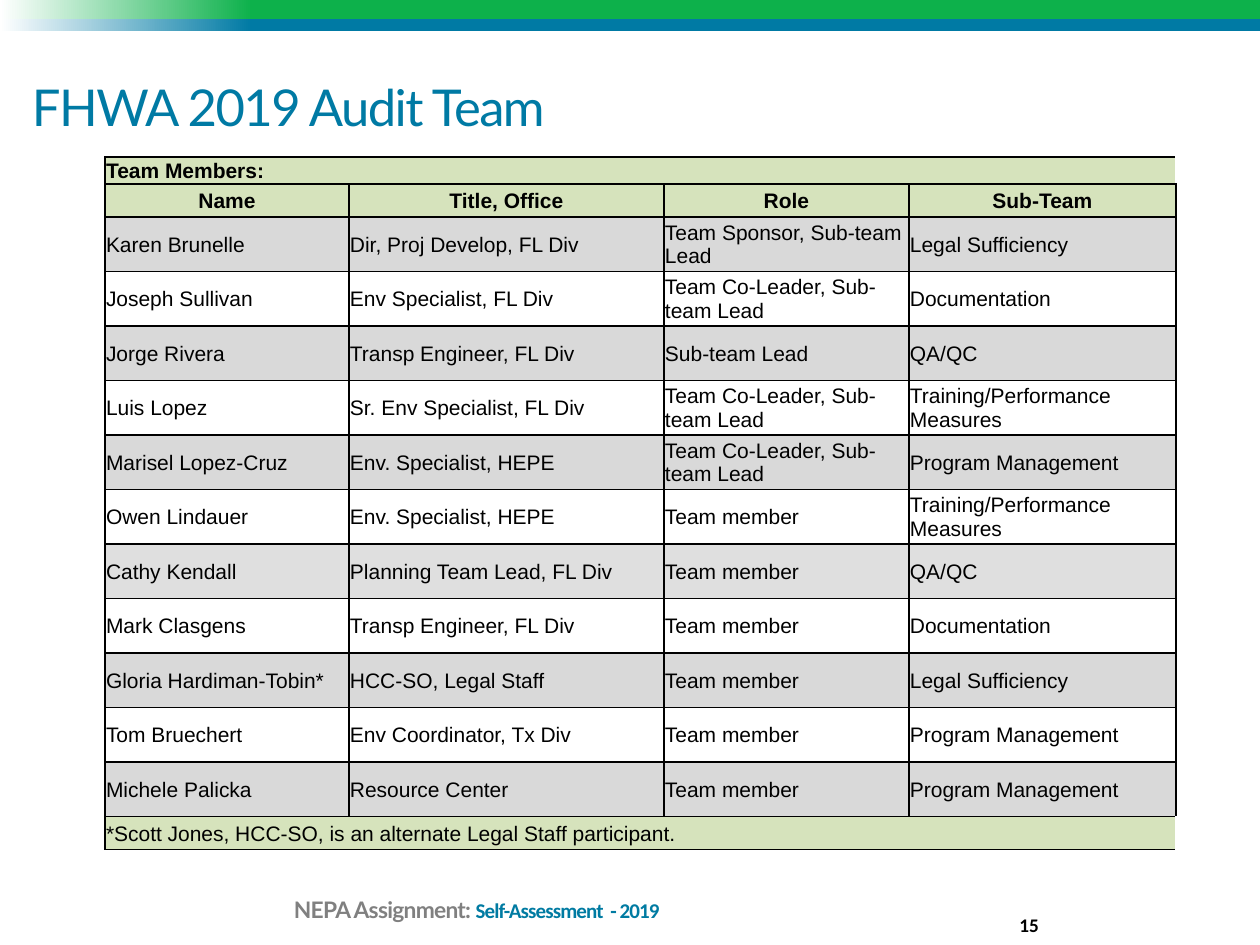
import dataclasses

import pptx
import pptx.dml.color
import pptx.enum.shapes
import pptx.enum.text
import pptx.oxml
import pptx.oxml.ns
import pptx.util

EMU_PER_PX = 914400 / 126
ALIGN = pptx.enum.text.PP_ALIGN
ANCHOR = pptx.enum.text.MSO_ANCHOR


@dataclasses.dataclass(frozen=True)
class Theme:
    heading_font: str = "Lato"
    small_font: str = "Calibri"
    table_font: str = "Arial"
    title_size: int = 29
    label_size: int = 13
    table_size: int = 12
    number_size: int = 11
    white: str = "FFFFFF"
    black: str = "000000"
    green: str = "0DB14B"
    blue: str = "007AA4"
    footer_blue: str = "007BA2"
    grey: str = "808080"
    header_fill: str = "D6E3BC"
    band_fill: str = "D9D9D9"
    light_band_fill: str = "DFDFDF"


THEME = Theme()

COLUMNS = [("Name", 244), ("Title, Office", 315), ("Role", 245), ("Sub-Team", 267)]
CO_LEAD = "Team Co-Leader, Sub-team Lead"
MEMBER = "Team member"
TRAINING = "Training/Performance Measures"
BAND, LIGHT = THEME.band_fill, THEME.light_band_fill
MEMBERS = [
    (BAND, "Karen Brunelle", "Dir, Proj Develop, FL Div", "Team Sponsor, Sub-team Lead", "Legal Sufficiency"),
    (None, "Joseph Sullivan", "Env Specialist, FL Div", CO_LEAD, "Documentation"),
    (BAND, "Jorge Rivera", "Transp Engineer, FL Div", "Sub-team Lead", "QA/QC"),
    (None, "Luis Lopez", "Sr. Env Specialist, FL Div", CO_LEAD, TRAINING),
    (BAND, "Marisel Lopez-Cruz", "Env. Specialist, HEPE", CO_LEAD, "Program Management"),
    (THEME.white, "Owen Lindauer", "Env. Specialist, HEPE", MEMBER, TRAINING),
    (LIGHT, "Cathy Kendall", "Planning Team Lead, FL Div", MEMBER, "QA/QC"),
    (None, "Mark Clasgens", "Transp Engineer, FL Div", MEMBER, "Documentation"),
    (BAND, "Gloria Hardiman-Tobin*", "HCC-SO, Legal Staff", MEMBER, "Legal Sufficiency"),
    (None, "Tom Bruechert", "Env Coordinator, Tx Div", MEMBER, "Program Management"),
    (BAND, "Michele Palicka", "Resource Center", MEMBER, "Program Management"),
]


def px(n):
    return pptx.util.Emu(round(n * EMU_PER_PX))


def rgb(color):
    return pptx.dml.color.RGBColor.from_string(color)


def add_run(p, text, font, size, color, bold=False, spacing=0):
    """Add a run; spacing is in hundredths of a point."""
    r = p.add_run()
    r.text = text
    r.font.name = font
    r.font.size = pptx.util.Pt(size)
    r.font.bold = bold
    r.font.color.rgb = rgb(color)
    if spacing:
        r._r.get_or_add_rPr().set("spc", str(spacing))


def add_bottom_text(s, x, y, w, h):
    """Add a text box without insets, anchored at the bottom; return its paragraph."""
    tf = s.shapes.add_textbox(px(x), px(y), px(w), px(h)).text_frame
    tf.word_wrap = True
    tf.vertical_anchor = ANCHOR.BOTTOM
    tf.margin_left = tf.margin_right = tf.margin_top = tf.margin_bottom = 0
    return tf.paragraphs[0]


def add_bands(s, x, y, w):
    """Stack the green and blue bands, each fading in from white."""
    for color, h in ((THEME.green, 19), (THEME.blue, 12)):
        sp = s.shapes.add_shape(pptx.enum.shapes.MSO_SHAPE.RECTANGLE, px(x), px(y), px(w), px(h))
        sp.shadow.inherit = False
        sp.line.fill.background()
        sp.fill.gradient()
        sp.fill.gradient_angle = 0
        stops = sp.fill.gradient_stops
        for stop, position, shade in zip(stops, (0, 0.2), (THEME.white, color)):
            stop.position = position
            stop.color.rgb = rgb(shade)
        y += h


def add_title(s, x, y, w, h):
    p = add_bottom_text(s, x, y, w, h)
    p.line_spacing = 0.8
    add_run(p, "FHWA 2019 Audit Team", THEME.heading_font, THEME.title_size, THEME.blue, spacing=-90)


def add_footer(s, x, y, w, h):
    p = add_bottom_text(s, x, y, w, h)
    p.line_spacing = 0.8
    p.space_after = pptx.util.Pt(12)
    add_run(p, "NEPA Assignment: ", THEME.heading_font, THEME.label_size, THEME.grey, True, -40)
    add_run(p, "Self-Assessment  - 2019", THEME.small_font, THEME.table_size, THEME.footer_blue, True, -50)


def add_slide_number(s, x, y, w, h):
    p = add_bottom_text(s, x, y, w, h)
    p.alignment = ALIGN.RIGHT
    add_run(p, "15", THEME.small_font, THEME.number_size, THEME.black, True)


def set_borders(cell, sides):
    """Draw 1 pt lines on the sides, given in the order L, R, T, B."""
    tc_pr = cell._tc.get_or_add_tcPr()
    for i, side in enumerate(sides):
        tc_pr.insert(i, pptx.oxml.parse_xml(
            f'<a:ln{side} {pptx.oxml.ns.nsdecls("a")} w="12700"><a:solidFill>'
            f'<a:srgbClr val="{THEME.black}"/></a:solidFill></a:ln{side}>'))


def style_cell(cell, fill, sides="LRTB"):
    if fill:
        cell.fill.solid()
        cell.fill.fore_color.rgb = rgb(fill)
    else:
        cell.fill.background()
    cell.vertical_anchor = ANCHOR.MIDDLE
    cell.margin_left = cell.margin_right = cell.margin_top = px(1)
    cell.margin_bottom = 0
    set_borders(cell, sides)


def fill_cell(cell, text, bold=False, align=ALIGN.LEFT):
    p = cell.text_frame.paragraphs[0]
    p.alignment = align
    add_run(p, text, THEME.table_font, THEME.table_size, THEME.black, bold)


def fill_spanning_row(table, row, text, bold):
    last = len(COLUMNS) - 1
    table.cell(row, 0).merge(table.cell(row, last))
    for col in range(last + 1):
        style_cell(table.cell(row, col), THEME.header_fill, "TB" if col else "LTB")
    fill_cell(table.cell(row, 0), text, bold)


def add_team_table(s, x, y, w, h):
    caption_h, header_h, note_h = 27, 33, 33
    member_h = (h - caption_h - header_h - note_h) / len(MEMBERS)
    heights = [caption_h, header_h] + [member_h] * len(MEMBERS) + [note_h]
    table = s.shapes.add_table(len(heights), len(COLUMNS), px(x), px(y), px(w), px(h)).table
    table.first_row = table.horz_banding = False
    for column, (_, width) in zip(table.columns, COLUMNS):
        column.width = px(width)
    for row, height in zip(table.rows, heights):
        row.height = px(height)

    fill_spanning_row(table, 0, "Team Members:", True)
    for col, (heading, _) in enumerate(COLUMNS):
        style_cell(table.cell(1, col), THEME.header_fill)
        fill_cell(table.cell(1, col), heading, True, ALIGN.CENTER)
    for row, (fill, *texts) in enumerate(MEMBERS, 2):
        for col, text in enumerate(texts):
            style_cell(table.cell(row, col), fill)
            fill_cell(table.cell(row, col), text)
    fill_spanning_row(table, len(heights) - 1,
                      "*Scott Jones, HCC-SO, is an alternate Legal Staff participant.", False)


def main():
    prs = pptx.Presentation()
    prs.slide_width, prs.slide_height = px(1260), px(945)
    s = prs.slides.add_slide(prs.slide_layouts[6])
    add_bands(s, 0, 0, 1260)
    add_footer(s, 294, 864, 682, 59)
    add_title(s, 32, 38, 1134, 98)
    add_slide_number(s, 966, 886, 73, 50)
    add_team_table(s, 105, 157, 1071, 693)
    prs.save("out.pptx")


if __name__ == "__main__":
    main()
